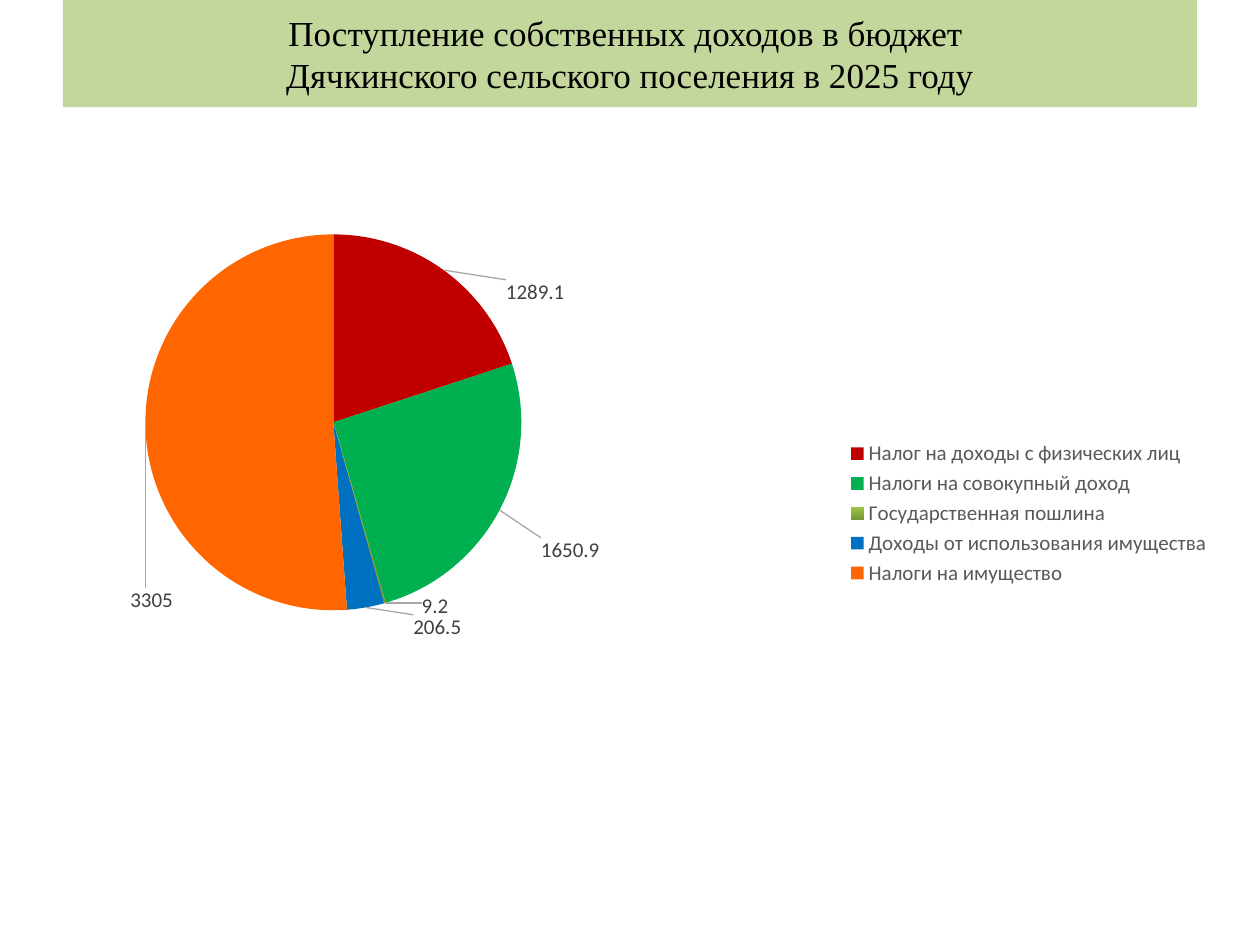
from lxml.etree import SubElement
from pptx import Presentation
from pptx.chart.data import CategoryChartData
from pptx.dml.color import RGBColor
from pptx.enum.chart import XL_CHART_TYPE, XL_LABEL_POSITION, XL_LEGEND_POSITION
from pptx.enum.shapes import MSO_SHAPE
from pptx.enum.text import MSO_ANCHOR, PP_ALIGN
from pptx.oxml import parse_xml
from pptx.oxml.ns import nsdecls, qn
from pptx.util import Pt

BLACK = RGBColor(0x00, 0x00, 0x00)
BANNER_GREEN = RGBColor(0xC3, 0xD6, 0x9B)
LEGEND_GRAY = RGBColor(0x59, 0x59, 0x59)
LABEL_GRAY = RGBColor(0x40, 0x40, 0x40)
RED = RGBColor(0xC0, 0x00, 0x00)
GREEN = RGBColor(0x00, 0xB0, 0x50)
OLIVE_DARK = RGBColor(0x77, 0x97, 0x37)
OLIVE_LIGHT = RGBColor(0x9D, 0xC7, 0x46)
BLUE = RGBColor(0x00, 0x70, 0xC0)
ORANGE = RGBColor(0xFF, 0x66, 0x00)

INCOME = [
    ("Налог на доходы с физических лиц", 1289.1, [RED], (0.05, 0.05)),
    ("Налоги на совокупный доход", 1650.9, [GREEN], (0.03, 0.03)),
    ("Государственная пошлина ", 9.2, [OLIVE_DARK, OLIVE_LIGHT], (0.03, -0.02)),
    ("Доходы от использования имущества", 206.5, [BLUE], (0.04, 0)),
    ("Налоги на имущество", 3305, [ORANGE], (0.03, 0.21)),
]


def format_font(font, name, size, color):
    """Set the face, size and colour of a font."""
    font.name = name
    font.size = Pt(size)
    font.color.rgb = color


def write_text(shape, text, *, font, size, color, align):
    """Write one paragraph of formatted text into a shape."""
    frame = shape.text_frame
    frame.word_wrap = True
    frame.vertical_anchor = MSO_ANCHOR.MIDDLE
    paragraph = frame.paragraphs[0]
    paragraph.text = text
    paragraph.alignment = align
    for run in paragraph.runs:
        format_font(run.font, font, size, color)


def set_layout(element, index, **settings):
    """Give a chart element a manual layout as its child at the index."""
    for old_layout in element.findall(qn("c:layout")):
        element.remove(old_layout)
    layout = parse_xml(f"<c:layout {nsdecls('c')}><c:manualLayout/></c:layout>")
    for name, value in settings.items():
        SubElement(layout[0], qn(f"c:{name}")).set("val", str(value))
    element.insert(index, layout)


def add_banner(slide, left, top, width, height):
    """Add the title banner."""
    shape = slide.shapes.add_shape(
        MSO_SHAPE.RECTANGLE, Pt(left), Pt(top), Pt(width), Pt(height))
    shape.shadow.inherit = False
    shape.fill.solid()
    shape.fill.fore_color.rgb = BANNER_GREEN
    shape.line.fill.background()
    write_text(
        shape,
        "Поступление собственных доходов в бюджет \vДячкинского сельского поселения в 2025 году",
        font="Times New Roman", size=20, color=BLACK, align=PP_ALIGN.CENTER)


def fill_slice(fill, colors):
    """Fill a slice with one colour or a vertical gradient of two."""
    if len(colors) == 1:
        fill.solid()
        fill.fore_color.rgb = colors[0]
        return
    fill.gradient()
    fill.gradient_angle = 90
    for stop, color in zip(fill.gradient_stops, colors):
        stop.color.rgb = color


def add_labels(series):
    """Show the values beside the slices with leader lines."""
    labels = series.data_labels
    labels.show_value = True
    labels.position = XL_LABEL_POSITION.OUTSIDE_END
    format_font(labels.font, "Calibri", 12, LABEL_GRAY)
    for index, (_, _, _, (x, y)) in enumerate(INCOME):
        label = series.points[index].data_label
        format_font(label.font, "Calibri", 12, LABEL_GRAY)
        label.position = XL_LABEL_POSITION.OUTSIDE_END
    element = series._element.find(qn("c:dLbls"))
    for label, (_, _, _, (x, y)) in zip(element.findall(qn("c:dLbl")), INCOME):
        set_layout(label, 1, x=x, y=y)
    for old_setting in element.findall(qn("c:showLeaderLines")):
        element.remove(old_setting)
    SubElement(element, qn("c:showLeaderLines")).set("val", "1")
    element.append(parse_xml(
        f"<c:leaderLines {nsdecls('c', 'a')}><c:spPr><a:ln w='9525'><a:solidFill>"
        "<a:srgbClr val='A6A6A6'/></a:solidFill></a:ln></c:spPr></c:leaderLines>"))


def add_income_chart(slide, left, top, width, height):
    """Add the pie of income sources with its legend."""
    data = CategoryChartData()
    data.categories = [name for name, *_ in INCOME]
    data.add_series("Series 1", [value for _, value, *_ in INCOME])
    chart = slide.shapes.add_chart(
        XL_CHART_TYPE.PIE, Pt(left), Pt(top), Pt(width), Pt(height), data).chart
    format_font(chart.font, "Calibri", 10, BLACK)
    chart.has_title = False
    chart.has_legend = True
    legend = chart.legend
    legend.position = XL_LEGEND_POSITION.RIGHT
    legend.include_in_layout = False
    format_font(legend.font, "Calibri", 12, LEGEND_GRAY)
    set_layout(legend._element, 1, xMode="edge", yMode="edge",
               x=0.675, y=0.405, w=0.315, h=0.19)
    plot = chart.plots[0]
    plot.vary_by_categories = True
    set_layout(plot._element.getparent(), 0, layoutTarget="inner",
               xMode="edge", yMode="edge", x=0.071, y=0.117, w=0.324, h=0.542)
    series = plot.series[0]
    for index, (_, _, colors, _) in enumerate(INCOME):
        slice_format = series.points[index].format
        fill_slice(slice_format.fill, colors)
        slice_format.line.fill.background()
    add_labels(series)


def main():
    """Build and save the presentation."""
    presentation = Presentation()
    presentation.slide_width = Pt(720)
    presentation.slide_height = Pt(540)
    slide = presentation.slides.add_slide(presentation.slide_layouts[6])
    add_banner(slide, 36, 0, 648, 61.2)
    add_income_chart(slide, 36, 61.2, 663, 464.4)
    presentation.save("out.pptx")


if __name__ == "__main__":
    main()
